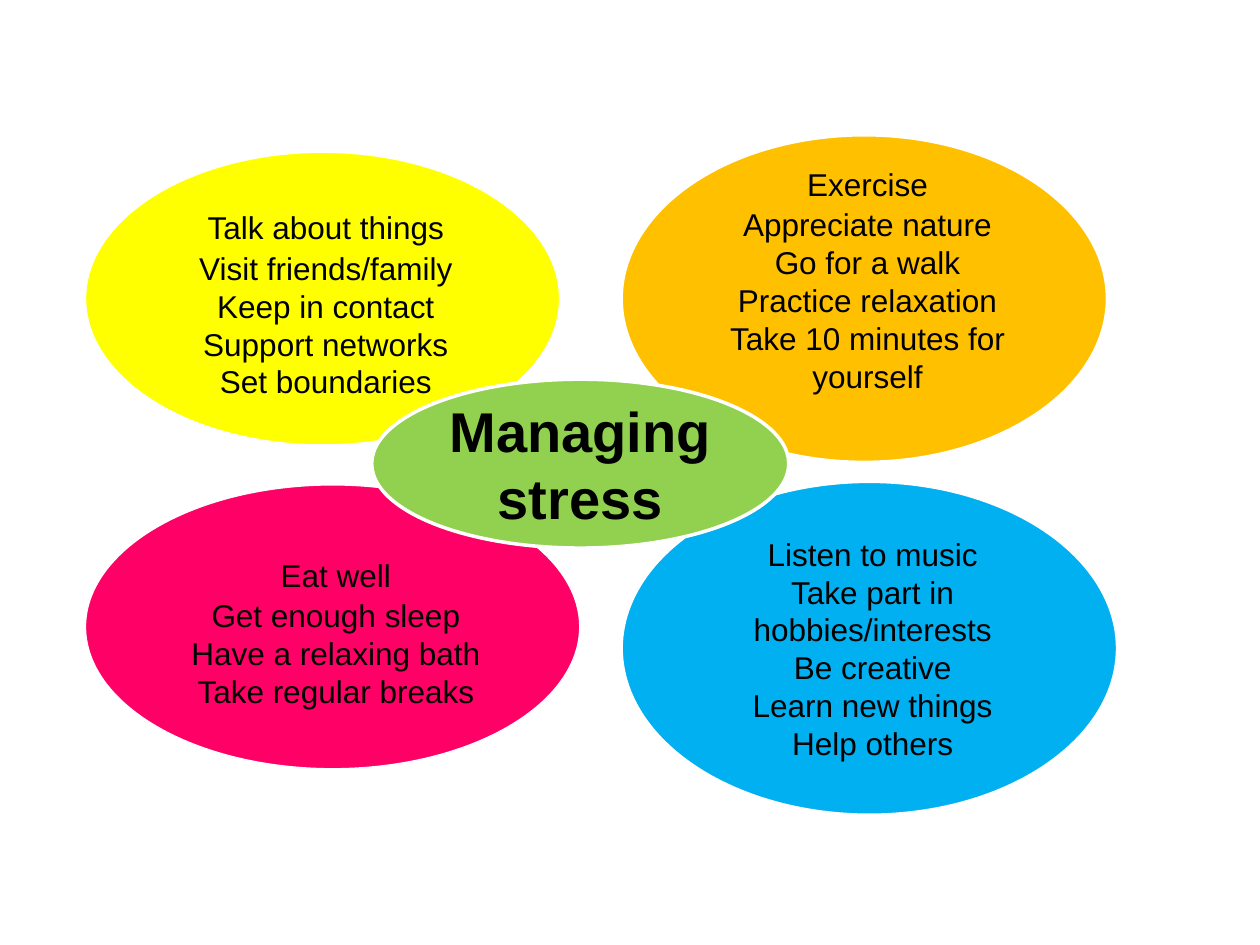
from dataclasses import dataclass

import pptx
import pptx.dml.color
import pptx.enum.shapes
import pptx.enum.text
import pptx.util

Inches = pptx.util.Inches
Pt = pptx.util.Pt
RGBColor = pptx.dml.color.RGBColor

BLACK = RGBColor(0x00, 0x00, 0x00)
WHITE = RGBColor(0xFF, 0xFF, 0xFF)
ORANGE = RGBColor(0xFF, 0xC0, 0x00)
YELLOW = RGBColor(0xFF, 0xFF, 0x00)
BLUE = RGBColor(0x00, 0xB0, 0xF0)
PINK = RGBColor(0xFF, 0x00, 0x66)
GREEN = RGBColor(0x92, 0xD0, 0x50)

TIP_FONT = {"name": "Arial", "size": Pt(18), "bold": False}
TOPIC_FONT = {"name": "Arial", "size": Pt(32), "bold": True}


@dataclass
class Bubble:
    left: float
    top: float
    width: float
    height: float
    fill: RGBColor
    lines: tuple[str, ...]
    font: dict
    margin_left: float = 0.15
    margin_top: float = 0.05
    margin_bottom: float = 0.05
    first_gap: float = 0


# Back to front: four groups of tips, then the topic over them
BUBBLES = (
    Bubble(4.93, 1.07, 3.86, 2.6, ORANGE,
           ("Exercise", "Appreciate nature", "Go for a walk",
            "Practice relaxation", "Take 10 minutes for yourself"),
           TIP_FONT, margin_bottom=0.35, first_gap=1.5),
    Bubble(0.67, 1.2, 3.78, 2.34, YELLOW,
           ("Talk about things", "Visit friends/family", "Keep in contact",
            "Support networks", "Set boundaries"),
           TIP_FONT, margin_top=0.14, first_gap=1.5),
    Bubble(4.93, 3.82, 3.94, 2.65, BLUE,
           ("Listen to music", "Take part in hobbies/interests",
            "Be creative", "Learn new things", "Help others"),
           TIP_FONT),
    Bubble(0.67, 3.84, 3.94, 2.27, PINK,
           ("Eat well", "Get enough sleep", "Have a relaxing bath",
            "Take regular breaks"),
           TIP_FONT, margin_top=0.14, first_gap=1.5),
    Bubble(2.95, 3.01, 3.31, 1.34, GREEN, ("Managing stress",),
           TOPIC_FONT, margin_left=0.1),
)


def write_lines(text_frame, bubble: Bubble) -> None:
    """Write one centred paragraph for each line of the bubble."""
    for index, line in enumerate(bubble.lines):
        paragraph = text_frame.paragraphs[0] if index == 0 else text_frame.add_paragraph()
        paragraph.alignment = pptx.enum.text.PP_ALIGN.CENTER
        paragraph.space_after = Pt(bubble.first_gap if index == 0 else 0)
        run = paragraph.add_run()
        run.text = line
        for name, value in bubble.font.items():
            setattr(run.font, name, value)
        run.font.color.rgb = BLACK


def draw_bubble(slide, bubble: Bubble) -> None:
    """Draw a filled ellipse with its text."""
    shape = slide.shapes.add_shape(
        pptx.enum.shapes.MSO_SHAPE.OVAL,
        Inches(bubble.left), Inches(bubble.top),
        Inches(bubble.width), Inches(bubble.height))
    shape.shadow.inherit = False
    shape.fill.solid()
    shape.fill.fore_color.rgb = bubble.fill
    shape.line.color.rgb = WHITE
    shape.line.width = Pt(2)

    frame_format = {
        "word_wrap": True,
        "vertical_anchor": pptx.enum.text.MSO_ANCHOR.MIDDLE,
        "margin_left": Inches(bubble.margin_left),
        "margin_right": Inches(0.1),
        "margin_top": Inches(bubble.margin_top),
        "margin_bottom": Inches(bubble.margin_bottom),
    }
    for name, value in frame_format.items():
        setattr(shape.text_frame, name, value)
    write_lines(shape.text_frame, bubble)


def main() -> None:
    presentation = pptx.Presentation()
    presentation.slide_width = Inches(10)
    presentation.slide_height = Inches(7.5)
    slide = presentation.slides.add_slide(presentation.slide_layouts[6])
    for bubble in BUBBLES:
        draw_bubble(slide, bubble)
    presentation.save("out.pptx")


if __name__ == "__main__":
    main()
